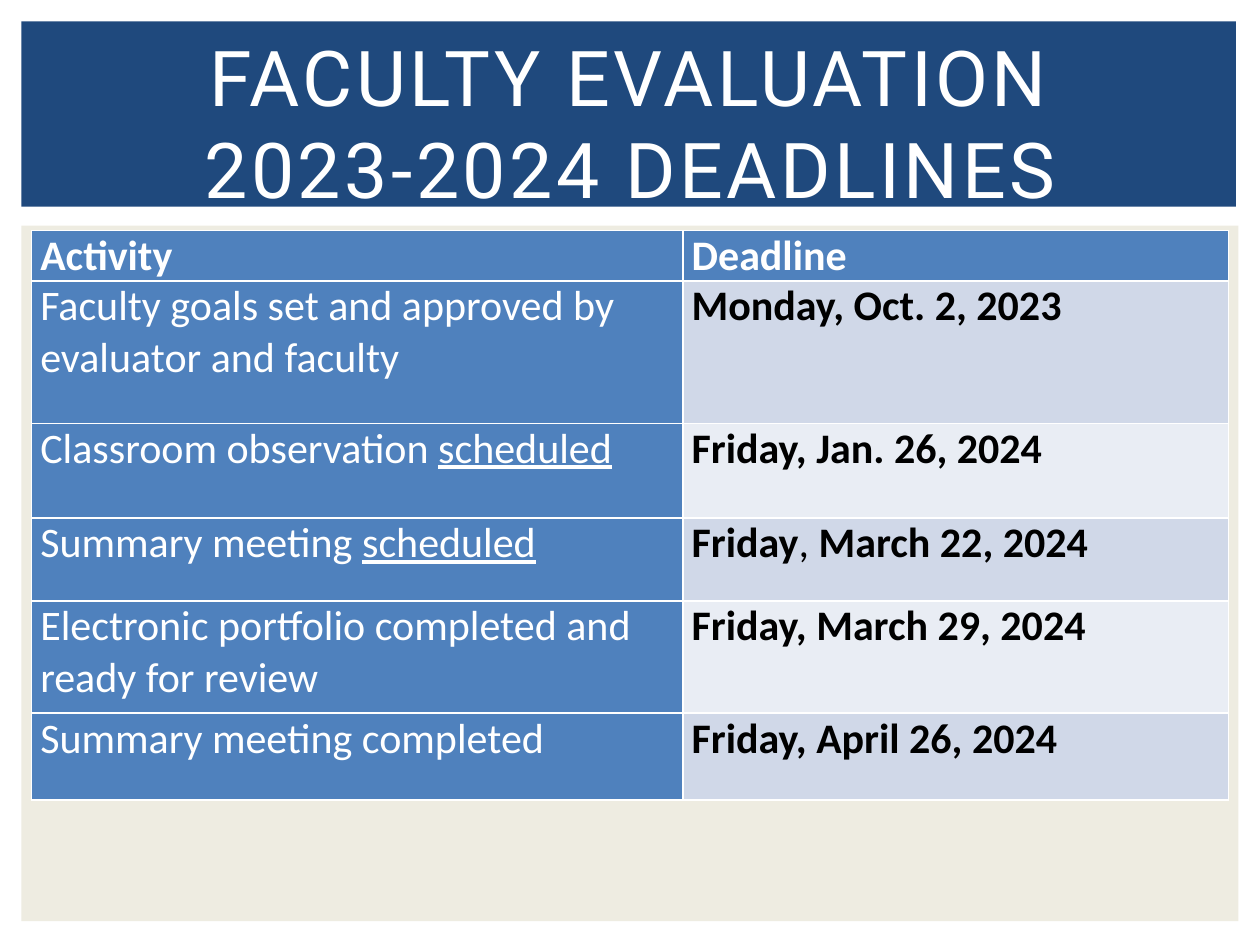
import pptx
import pptx.dml.color
import pptx.enum.shapes
import pptx.enum.text
import pptx.oxml
import pptx.oxml.ns
import pptx.util
from pptx.util import Inches

COLORS = {
    "navy": "1F497D",
    "cream": "EEECE1",
    "blue": "4F81BD",
    "band_dark": "D0D8E8",
    "band_light": "E9EDF4",
    "white": "FFFFFF",
    "black": "000000",
}


def rgb(name):
    return pptx.dml.color.RGBColor.from_string(COLORS[name])


def add_borders(cell, color, width):
    """Draw all four cell borders; call before the cell is filled."""
    properties = cell._tc.get_or_add_tcPr()
    for side in ("lnL", "lnR", "lnT", "lnB"):
        properties.append(pptx.oxml.parse_xml(
            f'<a:{side} {pptx.oxml.ns.nsdecls("a")} w="{pptx.util.Pt(width)}">'
            f'<a:solidFill><a:srgbClr val="{COLORS[color]}"/></a:solidFill>'
            f'</a:{side}>'))


deck = pptx.Presentation()
deck.slide_width, deck.slide_height = Inches(10), Inches(7.5)
page = deck.slides.add_slide(deck.slide_layouts[6])

# Background panels
for color, top, width, height in (("cream", 1.79, 9.66, 5.52),
                                  ("navy", 0.17, 9.64, 1.47)):
    panel = page.shapes.add_shape(
        pptx.enum.shapes.MSO_SHAPE.RECTANGLE,
        Inches(0.17), Inches(top), Inches(width), Inches(height))
    panel.shadow.inherit = False
    panel.fill.solid()
    panel.fill.fore_color.rgb = rgb(color)
    panel.line.fill.background()

# Title
title = page.shapes.add_textbox(Inches(0.42), Inches(0.39), Inches(9.17), Inches(1.15))
frame = title.text_frame
frame.word_wrap = True
frame.vertical_anchor = pptx.enum.text.MSO_ANCHOR.MIDDLE
frame.text = "FACULTY EVALUATION\v2023-2024 DEADLINES"
heading = frame.paragraphs[0]
heading.alignment = pptx.enum.text.PP_ALIGN.CENTER
for span in heading.runs:
    span.font.name = "Roboto"
    span.font.size = pptx.util.Pt(44)
    span.font.color.rgb = rgb("white")
    span._r.get_or_add_rPr().set("spc", "200")

# Deadlines table: each cell is a list of (text, style), b = bold, u = underlined
rows = [
    (0.39, [("Activity", "b")], [("Deadline", "b")]),
    (1.13, [("Faculty goals set and approved by evaluator and faculty", "")],
     [("Monday, Oct. 2, 2023", "b")]),
    (0.75, [("Classroom observation ", ""), ("scheduled", "u")],
     [("Friday, Jan. 26, 2024", "b")]),
    (0.66, [("Summary meeting ", ""), ("scheduled", "u")],
     [("Friday", "b"), (", ", ""), ("March 22, 2024", "b")]),
    (0.89, [("Electronic portfolio completed and ready for review", "")],
     [("Friday, March 29, 2024", "b")]),
    (0.69, [("Summary meeting completed", "")], [("Friday, April 26, 2024", "b")]),
]
table = page.shapes.add_table(
    len(rows), 2, Inches(0.25), Inches(1.83), Inches(9.5), Inches(4.53)).table
table.first_col = True
for column, width in zip(table.columns, (5.17, 4.33)):
    column.width = Inches(width)

for row_number, (height, *contents) in enumerate(rows):
    table.rows[row_number].height = Inches(height)
    for column_number, spans in enumerate(contents):
        cell = table.cell(row_number, column_number)
        cell.margin_left = cell.margin_right = Inches(0.07)
        cell.margin_top = cell.margin_bottom = 0
        add_borders(cell, "white", 1)

        on_blue = row_number == 0 or column_number == 0
        band = "band_dark" if row_number % 2 else "band_light"
        cell.fill.solid()
        cell.fill.fore_color.rgb = rgb("blue" if on_blue else band)

        paragraph = cell.text_frame.paragraphs[0]
        for text, style in spans:
            span = paragraph.add_run()
            span.text = text
            span.font.name = "Calibri"
            span.font.size = pptx.util.Pt(24)
            span.font.bold = "b" in style
            span.font.underline = "u" in style
            span.font.color.rgb = rgb("white" if on_blue else "black")

deck.save("out.pptx")
